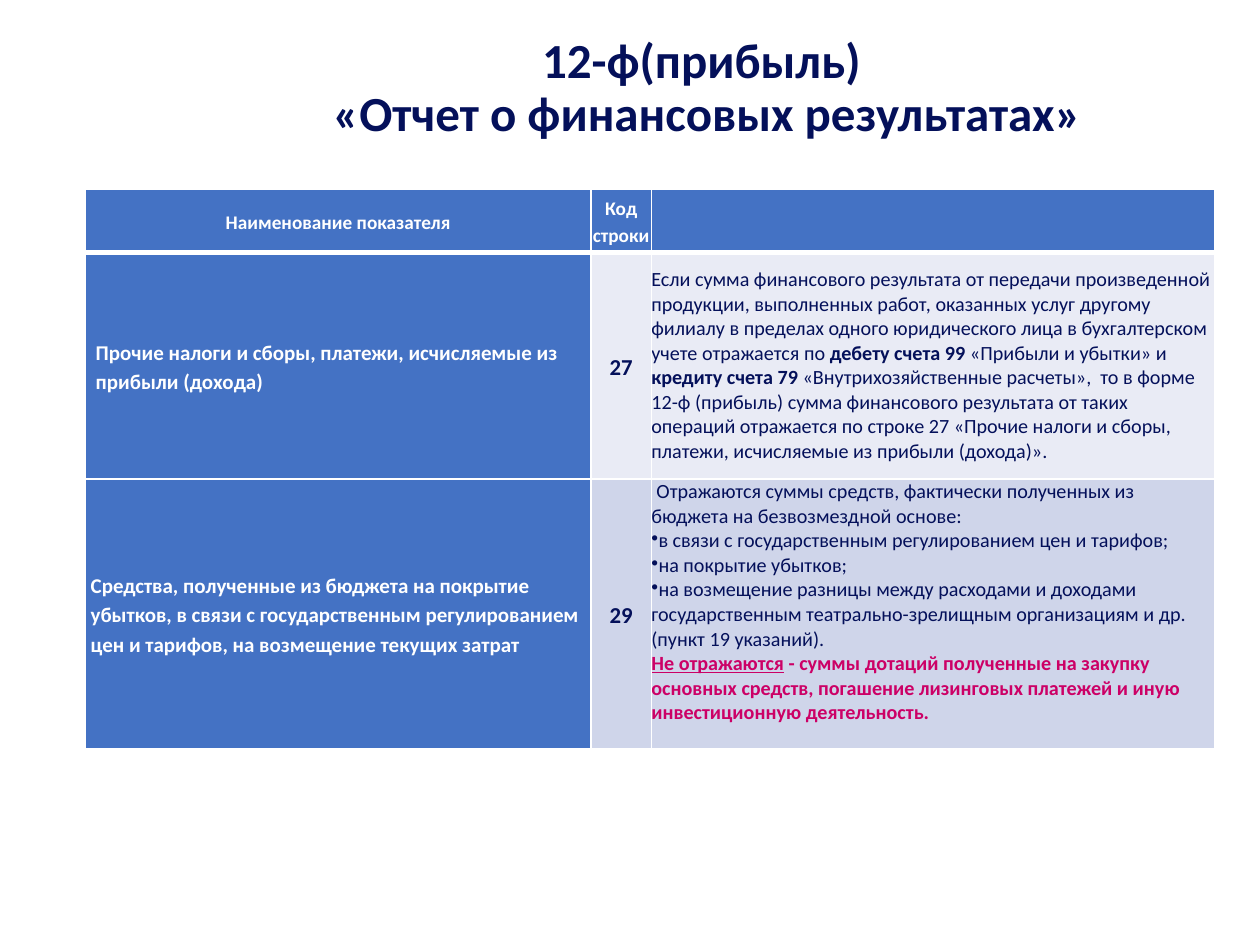
from dataclasses import dataclass
from typing import Optional

from lxml import etree
from pptx import Presentation
from pptx import util as u
from pptx.dml.color import RGBColor
from pptx.enum import text
from pptx.oxml.ns import qn


@dataclass(frozen=True)
class Theme:
    font: str = "Calibri"
    navy: str = "04105A"
    white: str = "FFFFFF"
    blue: str = "4472C4"
    pale: str = "E9EBF5"
    light: str = "CFD5EA"
    pink: str = "CC0066"
    title: float = 28
    header: float = 11
    label: float = 12
    code: float = 13
    body: float = 11.5
    thin: float = 1
    thick: float = 3


@dataclass(frozen=True)
class Run:
    text: str
    bold: bool = False
    underline: bool = False


@dataclass(frozen=True)
class Para:
    runs: tuple[Run, ...]
    color: str
    size: float
    align: text.PP_ALIGN = text.PP_ALIGN.LEFT
    spacing: float = 1.0
    bullet: bool = False
    indent: float = 0


@dataclass(frozen=True)
class Cell:
    fill: str
    paras: tuple[Para, ...] = ()
    left: float = 0
    bottom: float = 0


T = Theme()
WIDTH, HEIGHT = 10, 7.5
COLUMNS = (0.401, 0.048, 0.447)
ROWS = (0.067, 0.24, 0.285)
CENTER = text.PP_ALIGN.CENTER


def bold_para(line: str, color: str, size: float,
              align: text.PP_ALIGN = text.PP_ALIGN.LEFT) -> Para:
    return Para((Run(line, bold=True),), color, size, align, 1.15)


def header(line: str) -> Cell:
    return Cell(T.blue, (bold_para(line, T.white, T.header, CENTER),))


def label(left: float, *lines: str) -> Cell:
    return Cell(T.blue, tuple(bold_para(s, T.white, T.label) for s in lines), left)


def code(number: str, fill: str) -> Cell:
    return Cell(fill, (bold_para(number, T.navy, T.code, CENTER),))


def body(*runs: Run, color: str = T.navy, bullet: bool = False, indent: float = 0) -> Para:
    return Para(runs, color, T.body, bullet=bullet, indent=indent)


TABLE = (
    (header("Наименование показателя"), header("Код строки"), Cell(T.blue)),
    (
        label(0.08, "Прочие налоги и сборы, платежи, исчисляемые из", "прибыли (дохода)"),
        code("27", T.pale),
        Cell(T.pale, (body(
            Run("Если сумма финансового результата от передачи произведенной продукции, "
                "выполненных работ, оказанных услуг другому филиалу в пределах одного "
                "юридического лица в бухгалтерском учете отражается по "),
            Run("дебету счета 99", bold=True),
            Run(" «Прибыли и убытки» и "),
            Run("кредиту счета 79", bold=True),
            Run(" «Внутрихозяйственные расчеты»,  то в форме 12-ф (прибыль) сумма "
                "финансового результата от таких операций отражается по строке 27 "
                "«Прочие налоги и сборы, платежи, исчисляемые из прибыли (дохода)»."),
        ),)),
    ),
    (
        label(0.04, "Средства, полученные из бюджета на покрытие",
              "убытков, в связи с государственным регулированием",
              "цен и тарифов, на возмещение текущих затрат"),
        code("29", T.light),
        Cell(T.light, (
            body(Run("Отражаются суммы средств, фактически полученных из бюджета "
                     "на безвозмездной основе:"), indent=0.04),
            body(Run("в связи с государственным регулированием цен и тарифов;"), bullet=True),
            body(Run("на покрытие убытков;"), bullet=True),
            body(Run("на возмещение разницы между расходами и доходами государственным "
                     "театрально-зрелищным организациям и др."), bullet=True),
            body(Run("(пункт 19 указаний).")),
            body(Run("Не отражаются", bold=True, underline=True),
                 Run(" - суммы дотаций полученные на закупку основных средств, погашение "
                     "лизинговых платежей и иную инвестиционную деятельность.", bold=True),
                 color=T.pink),
        ), bottom=0.18),
    ),
)


def set_font(font, color: str, size: float, bold: Optional[bool] = None) -> None:
    font.name, font.size, font.bold = T.font, u.Pt(size), bold
    font.color.rgb = RGBColor.from_string(color)


def fill_para(p, para: Para) -> None:
    p.alignment, p.line_spacing = para.align, para.spacing
    pr = p._p.get_or_add_pPr()
    pr.set("marL", "0")
    pr.set("indent", str(u.Inches(para.indent)))
    if para.bullet:
        etree.SubElement(pr, qn("a:buChar"), char="•")
    bolds = {run.bold for run in para.runs}
    set_font(p.font, para.color, para.size, bolds.pop() if len(bolds) == 1 else None)
    for run in para.runs:
        r = p.add_run()
        r.text = run.text
        set_font(r.font, para.color, para.size, run.bold)
        if run.underline:
            r.font.underline = True


def add_borders(cell, top: float, bottom: float) -> None:
    pr = cell._tc.get_or_add_tcPr()
    widths = {"lnL": T.thin, "lnR": T.thin, "lnT": top, "lnB": bottom}
    for i, (tag, width) in enumerate(widths.items()):
        ln = etree.Element(qn(f"a:{tag}"), w=str(u.Pt(width)))
        fill = etree.SubElement(ln, qn("a:solidFill"))
        etree.SubElement(fill, qn("a:srgbClr"), val=T.white)
        pr.insert(i, ln)


def draw_cell(cell, data: Cell, row: int) -> None:
    cell.fill.solid()
    cell.fill.fore_color.rgb = RGBColor.from_string(data.fill)
    cell.margin_left, cell.margin_bottom = u.Inches(data.left), u.Inches(data.bottom)
    cell.margin_right = cell.margin_top = 0
    cell.vertical_anchor = text.MSO_ANCHOR.MIDDLE
    tf = cell.text_frame
    for i, para in enumerate(data.paras):
        fill_para(tf.add_paragraph() if i else tf.paragraphs[0], para)
    add_borders(cell, T.thick if row == 1 else T.thin, T.thick if row == 0 else T.thin)


def draw_table(s, left: float, top: float) -> None:
    widths = [u.Inches(c * WIDTH) for c in COLUMNS]
    heights = [u.Inches(r * HEIGHT) for r in ROWS]
    table = s.shapes.add_table(len(ROWS), len(COLUMNS), u.Inches(left * WIDTH),
                               u.Inches(top * HEIGHT), sum(widths), sum(heights)).table
    for column, width in zip(table.columns, widths):
        column.width = width
    for i, (row, height) in enumerate(zip(table.rows, heights)):
        row.height = height
        for cell, data in zip(row.cells, TABLE[i]):
            draw_cell(cell, data, i)


def draw_title(s, first: str, second: str) -> None:
    sp = s.shapes.add_textbox(u.Inches(0.13 * WIDTH), u.Inches(0.025 * HEIGHT),
                              u.Inches(0.862 * WIDTH), u.Inches(0.139 * HEIGHT))
    tf = sp.text_frame
    tf.word_wrap = True
    tf.vertical_anchor = text.MSO_ANCHOR.MIDDLE
    p = tf.paragraphs[0]
    p.text = f"{first}\v{second}"
    p.alignment, p.line_spacing = CENTER, 0.9
    set_font(p.font, T.navy, T.title, True)


def main() -> None:
    prs = Presentation()
    prs.slide_width, prs.slide_height = u.Inches(WIDTH), u.Inches(HEIGHT)
    s = prs.slides.add_slide(prs.slide_layouts[6])
    draw_title(s, "12-ф(прибыль) ", "«Отчет о финансовых результатах»")
    draw_table(s, 0.068, 0.2)
    prs.save("out.pptx")


if __name__ == "__main__":
    main()
